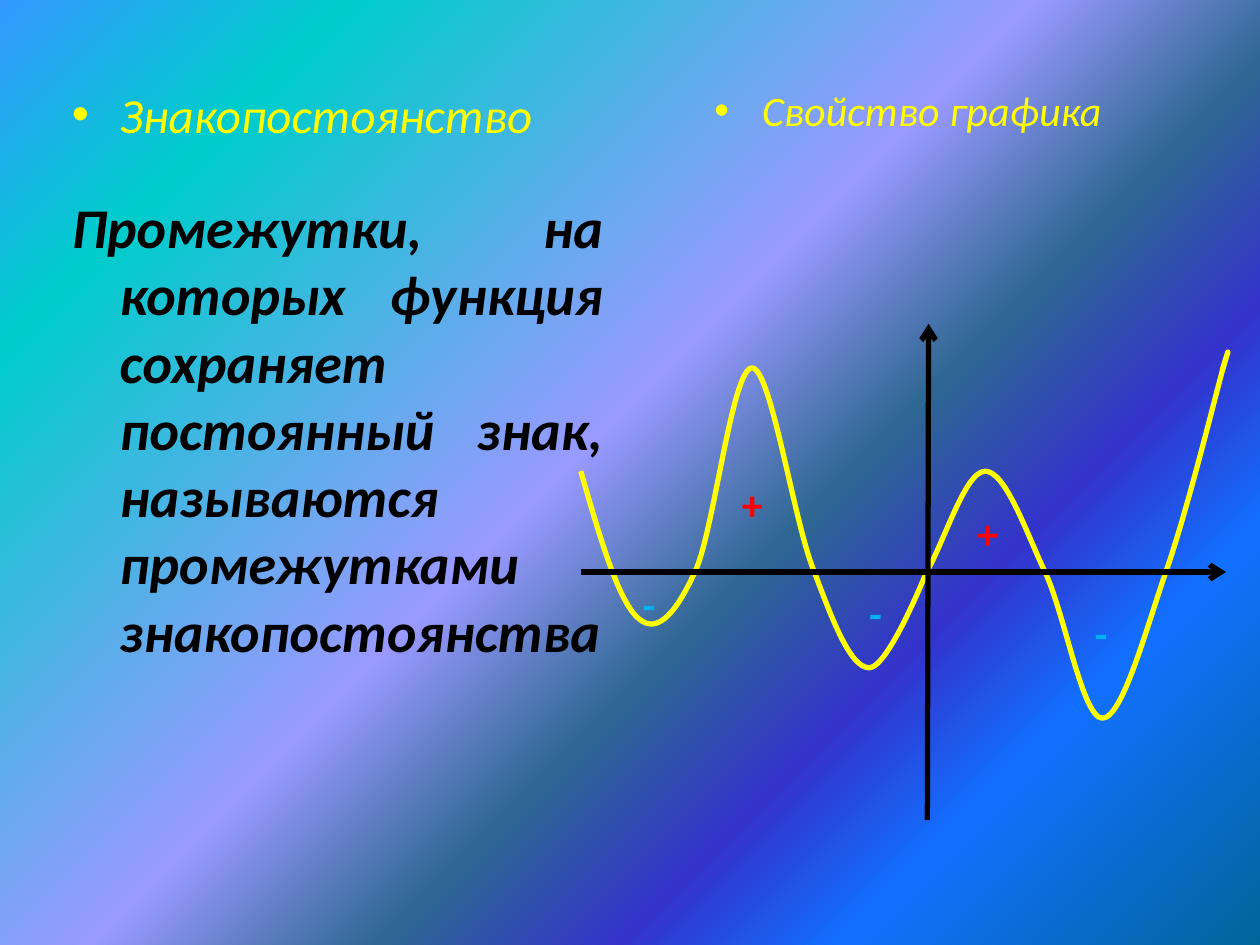
import dataclasses

import lxml.etree
import pptx
import pptx.dml.color
import pptx.enum.shapes
import pptx.enum.text
import pptx.oxml.ns
import pptx.util

Inches = pptx.util.Inches
qn = pptx.oxml.ns.qn
ALIGN = pptx.enum.text.PP_ALIGN


@dataclasses.dataclass(frozen=True)
class Theme:
    font: str = "Calibri"
    accent: str = "FFFF00"
    ink: str = "000000"
    positive: str = "FF0000"
    negative: str = "00B0F0"
    heading_size: int = 28
    subheading_size: int = 24
    body_size: int = 32
    sign_size: int = 24
    line_width: int = 3
    background: tuple = (
        (0, "3399FF"), (16, "00CCCC"), (47, "9999FF"), (60, "2E6792"),
        (71, "3333CC"), (81, "1170FF"), (100, "006699"),
    )


class SlideBuilder:
    def __init__(self, slide, theme):
        self.slide = slide
        self.theme = theme

    def paint_background(self):
        fill = self.slide.background.fill
        fill.gradient()
        fill.gradient_angle = 315
        stops = self.slide.background._cSld.find(".//" + qn("a:gsLst"))
        for stop in list(stops):
            stops.remove(stop)
        for percent, color in self.theme.background:
            stop = lxml.etree.SubElement(stops, qn("a:gs"), pos=str(percent * 1000))
            lxml.etree.SubElement(stop, qn("a:srgbClr"), val=color)

    def style_font(self, para, size, color, bold=False, italic=False):
        font = para.font
        font.name = self.theme.font
        font.size = pptx.util.Pt(size)
        font.bold = bold
        font.italic = italic
        font.color.rgb = pptx.dml.color.RGBColor.from_string(color)

    def fill_placeholder(self, index, text, bounds, size, color,
                         align=ALIGN.LEFT, bullet=True, bold=False):
        """Place a body placeholder and give its paragraph a hanging indent."""
        box = self.slide.placeholders[index]
        box.left, box.top, box.width, box.height = map(Inches, bounds)
        frame = box.text_frame
        frame.text = text
        frame.auto_size = pptx.enum.text.MSO_AUTO_SIZE.NONE
        frame.vertical_anchor = pptx.enum.text.MSO_ANCHOR.TOP
        para = frame.paragraphs[0]
        para.alignment = align
        para.space_before = pptx.util.Pt(round(size * 0.2, 1))
        self.style_font(para, size, color, bold, italic=True)
        properties = para._p.get_or_add_pPr()
        indent = Inches(0.38)
        properties.set("marL", str(indent))
        properties.set("indent", str(-indent))
        if bullet:
            mark = lxml.etree.Element(qn("a:buChar"), char="•")
        else:
            mark = lxml.etree.Element(qn("a:buNone"))
        properties.find(qn("a:defRPr")).addprevious(mark)

    def remove_empty_placeholders(self):
        for box in list(self.slide.placeholders):
            if not box.text_frame.text:
                box._element.getparent().remove(box._element)

    def style_line(self, line, color):
        line.width = pptx.util.Pt(self.theme.line_width)
        line.color.rgb = pptx.dml.color.RGBColor.from_string(color)

    def add_curve(self, start, points, color):
        """Draw a Bézier curve; points holds two controls and an end per segment."""
        builder = self.slide.shapes.build_freeform(*map(Inches, start))
        builder.add_line_segments(
            [(Inches(x), Inches(y)) for x, y in points], close=False)
        curve = builder.convert_to_shape()
        curve.shadow.inherit = False
        curve.fill.background()
        self.style_line(curve.line, color)
        outline = curve._element.find(".//" + qn("a:path"))
        corners = outline.findall(qn("a:lnTo"))
        for first in range(0, len(corners), 3):
            bezier = lxml.etree.SubElement(outline, qn("a:cubicBezTo"))
            for corner in corners[first:first + 3]:
                bezier.append(corner[0])
                outline.remove(corner)

    def add_axis(self, start, end):
        axis = self.slide.shapes.add_connector(
            pptx.enum.shapes.MSO_CONNECTOR.STRAIGHT, *map(Inches, start + end))
        self.style_line(axis.line, self.theme.ink)
        lxml.etree.SubElement(axis.line._get_or_add_ln(), qn("a:tailEnd"), type="arrow")
        lxml.etree.SubElement(axis._element.spPr, qn("a:effectLst"))

    def add_sign(self, sign, left, top, width, color):
        box = self.slide.shapes.add_textbox(*map(Inches, (left, top, width, 0.5)))
        frame = box.text_frame
        frame.text = sign
        frame.word_wrap = False
        frame.auto_size = pptx.enum.text.MSO_AUTO_SIZE.SHAPE_TO_FIT_TEXT
        self.style_font(frame.paragraphs[0], self.theme.sign_size, color, bold=True)


CURVE_START = (4.61, 3.74)
CURVE_POINTS = [
    (4.76, 4.26), (4.91, 4.78), (5.07, 4.91),
    (5.22, 5.04), (5.37, 4.86), (5.52, 4.53),
    (5.67, 4.2), (5.81, 2.92), (5.97, 2.92),
    (6.12, 2.92), (6.3, 4.14), (6.46, 4.53),
    (6.61, 4.93), (6.75, 5.3), (6.9, 5.3),
    (7.05, 5.3), (7.35, 4.55), (7.35, 4.55),
    (7.5, 4.29), (7.66, 3.74), (7.82, 3.74),
    (7.98, 3.74), (8.14, 4.21), (8.29, 4.53),
    (8.45, 4.86), (8.59, 5.7), (8.75, 5.7),
    (8.91, 5.7), (9.1, 4.98), (9.26, 4.52),
    (9.42, 4.06), (9.63, 3.21), (9.7, 2.95),
    (9.78, 2.68), (9.74, 2.81), (9.7, 2.94),
]


def main():
    theme = Theme()
    deck = pptx.Presentation()
    deck.slide_width, deck.slide_height = Inches(10), Inches(7.5)
    comparison = deck.slide_layouts.get_by_name("Comparison")
    page = SlideBuilder(deck.slides.add_slide(comparison), theme)

    page.paint_background()
    page.fill_placeholder(1, "Знакопостоянство", (0.47, 0.62, 4.42, 0.5),
                          theme.heading_size, theme.accent)
    page.fill_placeholder(
        2, "Промежутки, на которых функция сохраняет постоянный знак, "
        "называются промежутками знакопостоянства", (0.47, 1.48, 4.42, 4.64),
        theme.body_size, theme.ink, ALIGN.JUSTIFY, bullet=False, bold=True)
    page.fill_placeholder(3, "Свойство графика", (4.84, 0.62, 4.73, 0.5),
                          theme.subheading_size, theme.accent, ALIGN.CENTER)
    page.remove_empty_placeholders()

    page.add_curve(CURVE_START, CURVE_POINTS, theme.accent)
    page.add_axis((7.36, 6.51), (7.37, 2.57))
    page.add_axis((4.61, 4.54), (9.73, 4.54))
    for left, top in ((5, 4.54), (6.8, 4.61), (8.59, 4.77)):
        page.add_sign("-", left, top, 0.33, theme.negative)
    for left, top in ((5.79, 3.75), (7.66, 3.98)):
        page.add_sign("+", left, top, 0.44, theme.positive)

    deck.save("out.pptx")


if __name__ == "__main__":
    main()
